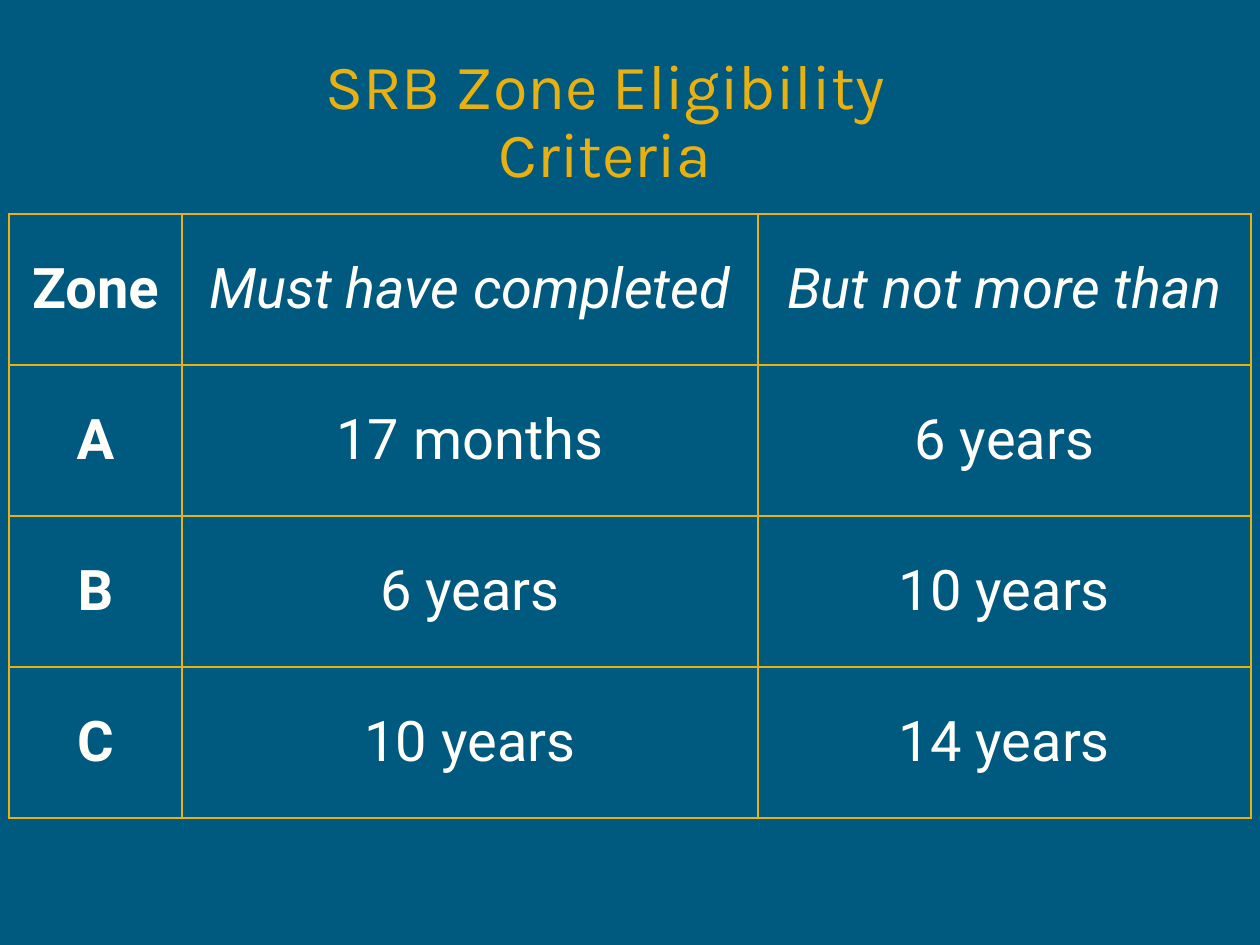
from lxml import etree
from pptx import Presentation
from pptx import util as u
from pptx.dml.color import RGBColor
from pptx.enum import text
from pptx.oxml.ns import qn

COLORS = {"background": "00597F", "gold": "E8B010", "cream": "FFFEF9"}
FONTS = {"title": "Karla", "table": "Roboto"}
PX_PER_INCH = 126


def px(length):
    return u.Emu(round(length * u.Inches(1) / PX_PER_INCH))


class SlideBuilder:
    """Holds the style and the slide being filled."""

    def __init__(self, presentation):
        self.slide = presentation.slides.add_slide(presentation.slide_layouts[5])
        fill = self.slide.background.fill
        fill.solid()
        fill.fore_color.rgb = RGBColor.from_string(COLORS["background"])

    def format_text(self, frame, font, size, color, bold=False, italic=False):
        frame.vertical_anchor = text.MSO_ANCHOR.MIDDLE
        for paragraph in frame.paragraphs:
            paragraph.alignment = text.PP_ALIGN.CENTER
            for run in paragraph.runs:
                run.font.name = FONTS[font]
                run.font.size = u.Pt(size)
                run.font.bold = bold
                run.font.italic = italic
                run.font.color.rgb = RGBColor.from_string(COLORS[color])

    def title(self, words, left, top, width, height):
        shape = self.slide.shapes.title
        shape.left, shape.top = px(left), px(top)
        shape.width, shape.height = px(width), px(height)
        frame = shape.text_frame
        frame.text = words
        frame.word_wrap = True
        frame.auto_size = text.MSO_AUTO_SIZE.NONE
        self.format_text(frame, "title", 36, "gold")
        frame.paragraphs[0].line_spacing = 0.9

    def cell_borders(self, cell, color, width):
        properties = cell._tc.get_or_add_tcPr()
        for position, side in enumerate(("a:lnL", "a:lnR", "a:lnT", "a:lnB")):
            line = etree.Element(qn(side), w=str(u.Pt(width)))
            fill = etree.SubElement(line, qn("a:solidFill"))
            etree.SubElement(fill, qn("a:srgbClr"), val=COLORS[color])
            properties.insert(position, line)

    def table(self, rows, left, top, column_widths, row_height):
        shape = self.slide.shapes.add_table(
            len(rows), len(column_widths), px(left), px(top),
            px(sum(column_widths)), px(row_height * len(rows)))
        table = shape.table
        for column, width in zip(table.columns, column_widths):
            column.width = px(width)
        for row_index, values in enumerate(rows):
            table.rows[row_index].height = px(row_height)
            for column_index, value in enumerate(values):
                cell = table.cell(row_index, column_index)
                cell.text_frame.text = value
                cell.fill.background()
                # Zone column is bold, the other headings are italic
                is_zone = column_index == 0
                self.format_text(cell.text_frame, "table", 32, "cream",
                                 bold=is_zone,
                                 italic=row_index == 0 and not is_zone)
                cell.vertical_anchor = text.MSO_ANCHOR.MIDDLE
                self.cell_borders(cell, "gold", 1)


def main():
    presentation = Presentation()
    presentation.slide_width, presentation.slide_height = px(1260), px(945)
    builder = SlideBuilder(presentation)

    # Heading
    builder.title("SRB Zone Eligibility Criteria", 217, 32, 776, 183)

    # Eligibility by zone
    zones = [
        ("Zone", "Must have completed", "But not more than"),
        ("A", "17 months", "6 years"),
        ("B", "6 years", "10 years"),
        ("C", "10 years", "14 years"),
    ]
    builder.table(zones, 9, 214, column_widths=(173, 576, 493), row_height=151)

    presentation.save("out.pptx")


if __name__ == "__main__":
    main()
